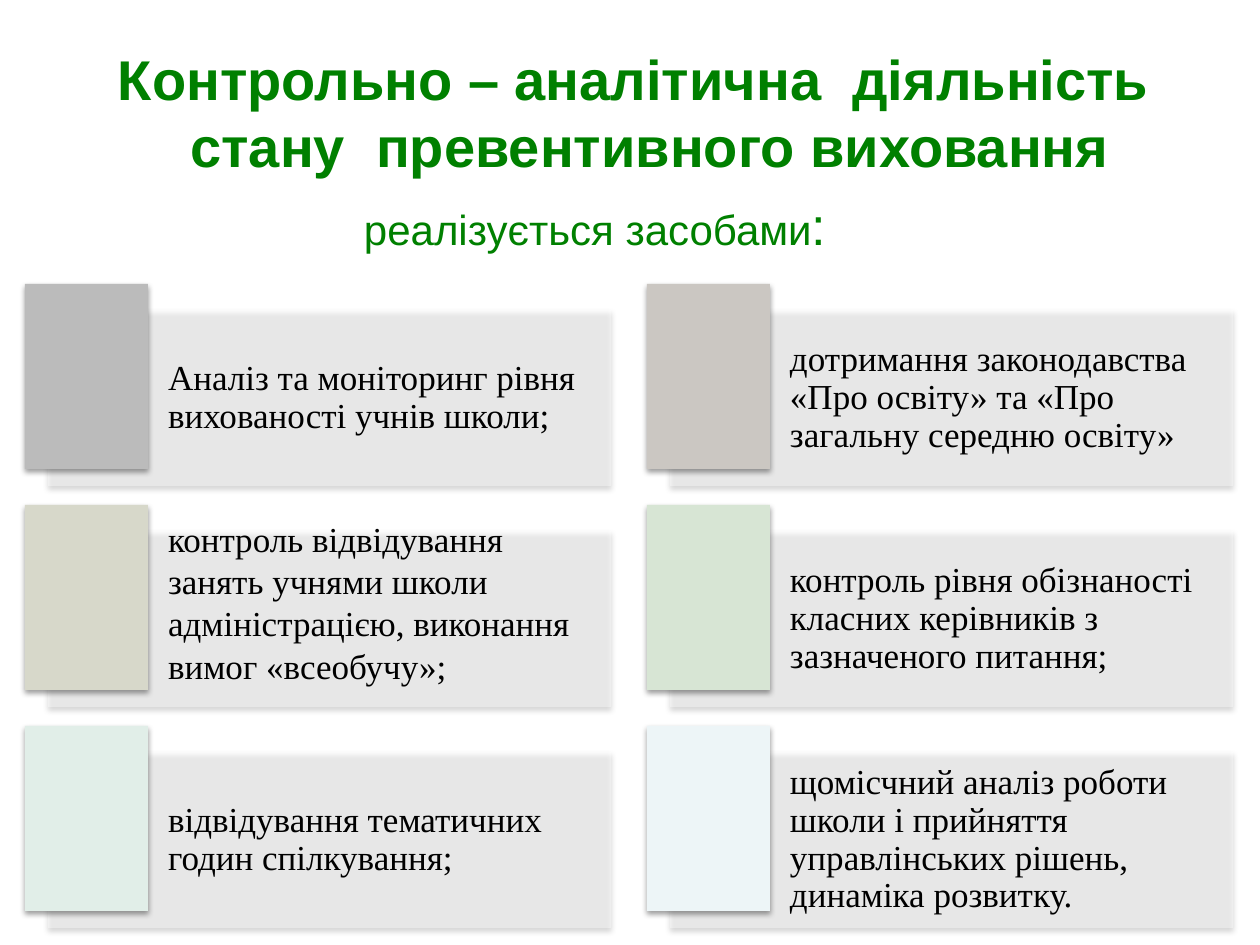
import pptx
import pptx.dml.color
import pptx.enum.shapes
import pptx.enum.text
import pptx.oxml
import pptx.oxml.ns
import pptx.util

RGBColor = pptx.dml.color.RGBColor
ALIGN = pptx.enum.text.PP_ALIGN
ANCHOR = pptx.enum.text.MSO_ANCHOR

PX = 914400 / 126
GREEN = RGBColor(0, 128, 0)
BLACK = RGBColor(0, 0, 0)
WHITE = RGBColor(255, 255, 255)

CARDS = [
    ("Аналіз та моніторинг рівня вихованості учнів школи;", RGBColor(0xBB, 0xBB, 0xBB)),
    ("дотримання законодавства «Про освіту» та «Про загальну середню освіту»",
     RGBColor(0xCB, 0xC7, 0xC2)),
    ("контроль відвідування занять учнями школи адміністрацією, виконання вимог «всеобучу»;",
     RGBColor(0xD7, 0xD8, 0xCA)),
    ("контроль рівня обізнаності класних керівників з зазначеного питання;",
     RGBColor(0xD7, 0xE5, 0xD4)),
    ("відвідування тематичних годин спілкування;", RGBColor(0xE1, 0xEE, 0xE8)),
    ("щомісчний аналіз роботи школи і прийняття управлінських рішень, динаміка розвитку.",
     RGBColor(0xED, 0xF5, 0xF7)),
]
TALL_CARD = 2

SHADOW = (
    '<a:effectLst xmlns:a="http://schemas.openxmlformats.org/drawingml/2006/main">'
    '<a:outerShdw blurRad="40000" dist="20000" dir="5400000" rotWithShape="0">'
    '<a:srgbClr val="000000"><a:alpha val="38000"/></a:srgbClr>'
    '</a:outerShdw></a:effectLst>'
)
ALPHA = (
    '<a:alpha xmlns:a="http://schemas.openxmlformats.org/drawingml/2006/main" val="40000"/>'
)


def px(length):
    return round(length * PX)


def apply_format(target, values):
    for name, value in values.items():
        setattr(target, name, value)


def add_box(page, left, top, width, height, insets, anchor):
    box = page.shapes.add_textbox(px(left), px(top), px(width), px(height))
    frame = box.text_frame
    sides = ("margin_left", "margin_top", "margin_right", "margin_bottom")
    apply_format(frame, dict(zip(sides, map(px, insets))))
    apply_format(frame, {"word_wrap": True, "vertical_anchor": anchor})
    return frame


def add_span(para, text, size, name, color, bold=False):
    span = para.add_run()
    span.text = text
    apply_format(span.font, {"size": pptx.util.Pt(size), "name": name, "bold": bold})
    span.font.color.rgb = color


def add_rectangle(page, left, top, width, height, color, translucent=False):
    shape = page.shapes.add_shape(
        pptx.enum.shapes.MSO_SHAPE.RECTANGLE, px(left), px(top), px(width), px(height))
    shape.shadow.inherit = False
    shape.fill.solid()
    shape.fill.fore_color.rgb = color
    shape.line.fill.background()
    properties = shape.element.spPr
    properties.replace(
        properties.find(pptx.oxml.ns.qn("a:effectLst")), pptx.oxml.parse_xml(SHADOW))
    if translucent:
        fill_color = properties.find(pptx.oxml.ns.qn("a:solidFill"))[0]
        fill_color.append(pptx.oxml.parse_xml(ALPHA))


def add_title(page):
    frame = add_box(page, 63, 35, 1166, 154, (11, 6, 11, 6), ANCHOR.MIDDLE)
    lines = [("Контрольно – аналітична  діяльність", 32),
             ("стану  превентивного виховання", 0)]
    for number, (text, right_margin) in enumerate(lines):
        para = frame.add_paragraph() if number else frame.paragraphs[0]
        para.alignment = ALIGN.CENTER
        properties = para._p.get_or_add_pPr()
        properties.set("marL", str(px(8)))
        properties.set("marR", str(px(right_margin)))
        add_span(para, text, 32, "Arial", GREEN, True)


def add_subtitle(page):
    frame = add_box(page, 353, 187, 507, 79, (11, 6, 11, 6), ANCHOR.TOP)
    para = frame.paragraphs[0]
    add_span(para, "реалізується засобами", 24, "Arial", GREEN)
    add_span(para, ":", 30, "Arial", GREEN)


def add_card(page, index, text, color):
    row, column = divmod(index, 2)
    left, top = 25 + 622 * column, 284 + 221 * row
    panel = (left + 23, top + 26, 563, 176)
    tall = index == TALL_CARD
    add_rectangle(page, *panel, WHITE, translucent=True)
    insets = (120, 10, 10, 44 if tall else 10)
    para = add_box(page, *panel, insets, ANCHOR.MIDDLE).paragraphs[0]
    para.line_spacing = 1.0 if tall else 0.9
    add_span(para, text, 20, "Times New Roman", BLACK)
    add_rectangle(page, left, top, 123, 185, color)


def main():
    deck = pptx.Presentation()
    apply_format(deck, {"slide_width": px(1260), "slide_height": px(945)})
    page = deck.slides.add_slide(deck.slide_layouts[6])
    add_title(page)
    add_subtitle(page)
    for index, (text, color) in enumerate(CARDS):
        add_card(page, index, text, color)
    deck.save("out.pptx")


if __name__ == "__main__":
    main()
